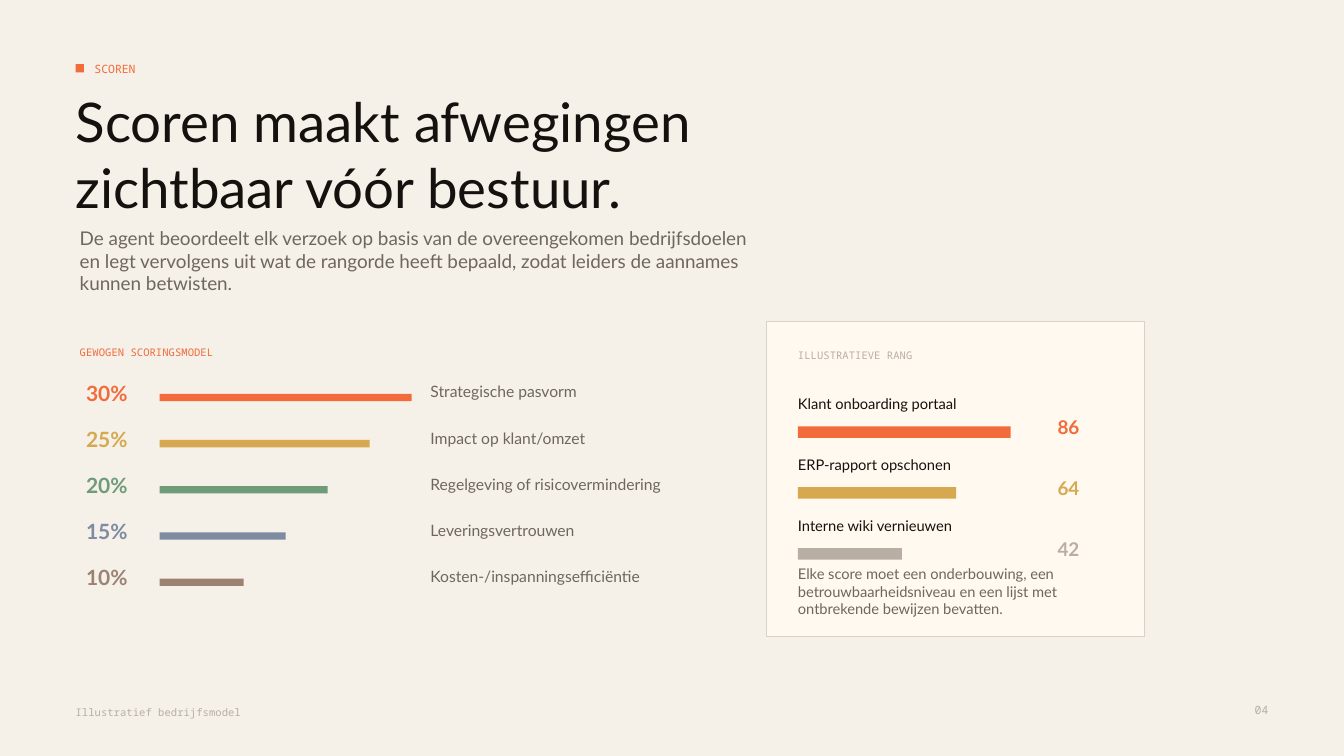
import pptx
import pptx.dml.color
import pptx.enum.shapes
import pptx.enum.text
import pptx.util

WIDTH, HEIGHT = pptx.util.Inches(13.33), pptx.util.Inches(7.5)
COLUMNS, ROWS = 128, 72
SANS, MONO = "Lato", "Noto Sans Mono"
PAPER, CARD, BORDER = "F5F0E8", "FFF9EF", "D9D0C6"
INK, GREY, PALE = "15110E", "6F675F", "B8AEA4"
ORANGE, GOLD, GREEN, BLUE, BROWN = "F26B3A", "D6A84F", "6E9B78", "7E8BA3", "9B8272"
MARGIN, INDENT, CARD_TEXT = 7.2, 7.6, 76

WEIGHTS = [
    (30, "Strategische pasvorm", ORANGE),
    (25, "Impact op klant/omzet", GOLD),
    (20, "Regelgeving of risicovermindering", GREEN),
    (15, "Leveringsvertrouwen", BLUE),
    (10, "Kosten-/inspanningsefficiëntie", BROWN),
]
RANKING = [
    (86, "Klant onboarding portaal", ORANGE),
    (64, "ERP-rapport opschonen", GOLD),
    (42, "Interne wiki vernieuwen", PALE),
]


def color(value):
    return pptx.dml.color.RGBColor.from_string(value)


def place(left, top, width, height):
    """Turn grid columns and rows into slide lengths."""
    return (int(left * WIDTH / COLUMNS), int(top * HEIGHT / ROWS),
            int(width * WIDTH / COLUMNS), int(height * HEIGHT / ROWS))


def add_box(slide, *cells, fill, border=None):
    shape = slide.shapes.add_shape(
        pptx.enum.shapes.MSO_SHAPE.RECTANGLE, *place(*cells))
    shape.shadow.inherit = False
    shape.fill.solid()
    shape.fill.fore_color.rgb = color(fill)
    if border:
        shape.line.color.rgb = color(border)
        shape.line.width = pptx.util.Pt(0.75)
    else:
        shape.line.fill.background()


def add_text(slide, text, *cells, size, ink, font=SANS, bold=False,
             right=False, middle=False):
    frame = slide.shapes.add_textbox(*place(*cells)).text_frame
    frame.word_wrap = True
    frame.margin_left = frame.margin_right = 0
    frame.margin_top = frame.margin_bottom = 0
    if middle:
        frame.vertical_anchor = pptx.enum.text.MSO_ANCHOR.MIDDLE
    paragraph = frame.paragraphs[0]
    if right:
        paragraph.alignment = pptx.enum.text.PP_ALIGN.RIGHT
    run = paragraph.add_run()
    run.text = text
    run.font.name = font
    run.font.size = pptx.util.Pt(size)
    run.font.bold = bold
    run.font.color.rgb = color(ink)


def add_header(slide):
    add_box(slide, MARGIN, 6.1, 0.8, 0.8, fill=ORANGE)
    add_text(slide, "SCOREN", 9, 5.4, 42, 2.4,
             size=8.2, ink=ORANGE, font=MONO, middle=True)
    add_text(slide, "Scoren maakt afwegingen zichtbaar vóór bestuur.",
             MARGIN, 8.4, 78, 13.2, size=39, ink=INK)
    add_text(slide, "De agent beoordeelt elk verzoek op basis van de overeengekomen "
             "bedrijfsdoelen en legt vervolgens uit wat de rangorde heeft bepaald, "
             "zodat leiders de aannames kunnen betwisten.",
             INDENT, 21.6, 65, 7, size=13.5, ink=GREY)


def add_weights(slide):
    add_text(slide, "GEWOGEN SCORINGSMODEL", INDENT, 33, 28, 1.8,
             size=7.5, ink=ORANGE, font=MONO)
    for index, (weight, label, accent) in enumerate(WEIGHTS):
        top = 36.2 + 4.4 * index
        add_text(slide, f"{weight}%", 8.2, top, 5.8, 2.4,
                 size=15, ink=accent, bold=True)
        add_box(slide, 15.2, top + 1.3, 0.8 * weight, 0.7, fill=accent)
        add_text(slide, label, 41, top + 0.2, 25, 2, size=11.2, ink=GREY)


def add_ranking(slide):
    add_box(slide, 73, 30.6, 36, 30, fill=CARD, border=BORDER)
    add_text(slide, "ILLUSTRATIEVE RANG", CARD_TEXT, 33.2, 18, 1.8,
             size=7.5, ink=PALE, font=MONO)
    for index, (score, label, accent) in enumerate(RANKING):
        top = 37.6 + 5.8 * index
        add_text(slide, label, CARD_TEXT, top, 21, 2.2, size=10.5, ink=INK)
        add_box(slide, CARD_TEXT, top + 3, 20.25 * score / 86, 1.1, fill=accent)
        add_text(slide, str(score), 98, top + 2, 4.8, 2.2,
                 size=13.5, ink=accent, bold=True, right=True)
    add_text(slide, "Elke score moet een onderbouwing, een betrouwbaarheidsniveau "
             "en een lijst met ontbrekende bewijzen bevatten.",
             CARD_TEXT, 53.8, 27, 5.2, size=10.5, ink=GREY)


def add_footer(slide):
    add_text(slide, "Illustratief bedrijfsmodel", MARGIN, 67.2, 32, 1.8,
             size=7.5, ink=PALE, font=MONO)
    add_text(slide, "04", 116, 67, 4.8, 2,
             size=8.2, ink=PALE, font=MONO, right=True)


def main():
    presentation = pptx.Presentation()
    presentation.slide_width, presentation.slide_height = WIDTH, HEIGHT
    slide = presentation.slides.add_slide(presentation.slide_layouts[6])
    add_box(slide, 0, 0, COLUMNS, ROWS, fill=PAPER)
    add_header(slide)
    add_weights(slide)
    add_ranking(slide)
    add_footer(slide)
    presentation.save("out.pptx")


if __name__ == "__main__":
    main()
